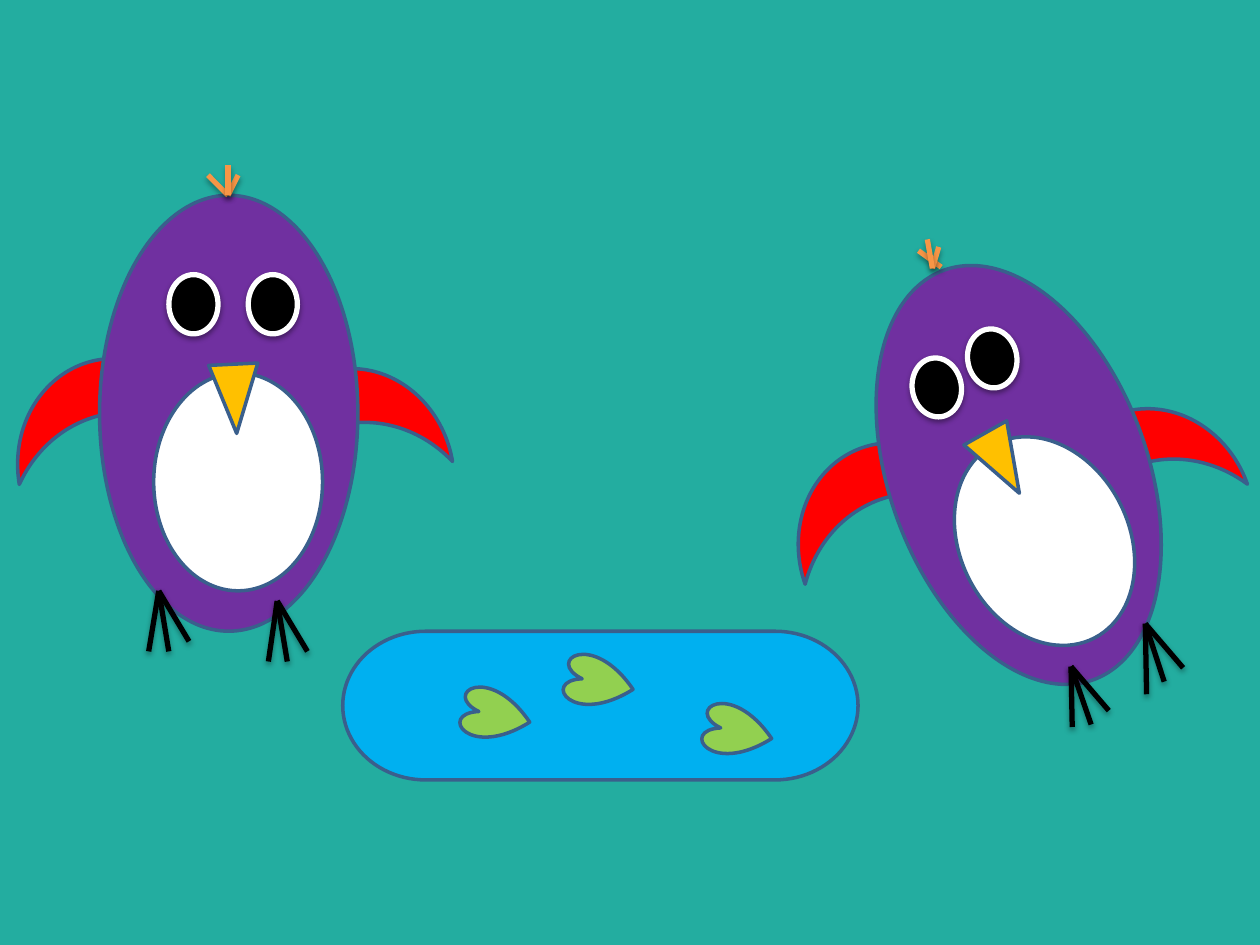
from dataclasses import dataclass

from lxml.etree import SubElement
from pptx import Presentation
from pptx.dml.color import RGBColor
from pptx.enum.shapes import MSO_CONNECTOR as Connector, MSO_SHAPE as Preset
from pptx.oxml.ns import qn
from pptx.shapes.group import GroupShape
from pptx.util import Inches, Pt

COLUMNS, ROWS = 100, 75
CELL = Inches(10) / COLUMNS
COLORS = {
    "meadow": "23ADA0", "outline": "3A5F8C", "wing": "FF0000", "body": "7030A0",
    "white": "FFFFFF", "black": "000000", "crest": "F79646", "beak": "FFC000",
    "water": "00B0F0", "leaf": "92D050",
}
Point = tuple[float, float]


@dataclass(frozen=True)
class Part:
    preset: Preset
    width: float
    height: float
    fill: str
    line: str = "outline"
    weight: float = 2
    shaded: bool = False


@dataclass(frozen=True)
class Place:
    column: float
    row: float
    turn: float = 0


@dataclass(frozen=True)
class Fan:
    root: Point
    tips: tuple[Point, ...]


@dataclass(frozen=True)
class Bird:
    wings: tuple[Place, ...]
    body: Place
    eyes: tuple[Place, ...]
    feet: tuple[Fan, ...]
    crest: tuple[Fan, ...]
    belly: Place
    beak: Place


WING = Part(Preset.MOON, 8.7, 15.7, "wing")
BODY = Part(Preset.FLOWCHART_CONNECTOR, 20.5, 34.6, "body")
EYE = Part(Preset.FLOWCHART_CONNECTOR, 3.9, 4.7, "black", "white", 3, True)
BELLY = Part(Preset.FLOWCHART_CONNECTOR, 13.4, 17.3, "white")
BEAK = Part(Preset.ISOSCELES_TRIANGLE, 3.9, 5.5, "beak")
POND = Part(Preset.FLOWCHART_TERMINATOR, 40.9, 11.8, "water")
LEAF = Part(Preset.HEART, 3.9, 5.5, "leaf")

LEANING_BIRD = Bird(
    wings=(Place(65.5, 31.8, 70.5), Place(85.8, 29.1, 70.5)),
    body=Place(70.6, 20.4, 339.9),
    eyes=(Place(72.4, 28.4, 350.2), Place(76.8, 26.1, 350.2)),
    feet=(
        Fan((85, 52.9), ((88, 56.4), (86.6, 57.5), (85.1, 57.7))),
        Fan((90.9, 49.5), ((91, 55.1), (93.9, 53), (92.4, 54.1))),
    ),
    crest=(
        Fan((74.7, 21.2), ((72.9, 19.9),)),
        Fan((74, 21.3), ((74.5, 19.6), (73.6, 19))),
    ),
    belly=Place(76.2, 34.3, 332.7),
    beak=Place(77.6, 34, 150.6),
)
UPRIGHT_BIRD = Bird(
    wings=(Place(4.2, 25, 80.4), Place(23.1, 25.8, 80.4)),
    body=Place(7.9, 15.5),
    eyes=(Place(13.4, 21.8), Place(19.7, 21.8)),
    feet=(
        Fan((12.6, 46.9), ((11.8, 51.7), (15, 50.9), (13.4, 51.7))),
        Fan((22, 47.7), ((21.3, 52.5), (24.4, 51.7), (22.8, 52.5))),
    ),
    crest=(Fan((18.1, 15.5), ((16.5, 13.9), (18.9, 13.9), (18.1, 13.1))),),
    belly=Place(12.2, 29.6),
    beak=Place(16.7, 28.9, 177.2),
)
POND_PLACE = Place(27.2, 50.1)
LEAF_PLACES = (
    Place(37.4, 54, 281.8), Place(45.6, 51.4, 281.8), Place(56.6, 55.3, 281.8),
)


def cells(count: float) -> int:
    return round(count * CELL)


def color(name: str) -> RGBColor:
    return RGBColor.from_string(COLORS[name])


def add_shadow(shape, distance: float, opacity: int) -> None:
    effects = SubElement(shape._element.spPr, qn("a:effectLst"))
    shadow = SubElement(
        effects, qn("a:outerShdw"), blurRad=str(Pt(3.1)), dist=str(Pt(distance)),
        dir="5400000", rotWithShape="0",
    )
    tint = SubElement(shadow, qn("a:srgbClr"), val=COLORS["black"])
    SubElement(tint, qn("a:alpha"), val=str(opacity * 1000))


def draw_part(group: GroupShape, part: Part, *places: Place) -> None:
    for place in places:
        shape = group.shapes.add_shape(
            part.preset, cells(place.column), cells(place.row),
            cells(part.width), cells(part.height),
        )
        shape.rotation = place.turn
        shape.fill.solid()
        shape.fill.fore_color.rgb = color(part.fill)
        shape.line.color.rgb = color(part.line)
        shape.line.width = Pt(part.weight)
        if part.shaded:
            add_shadow(shape, 1.6, 38)
        else:
            shape.shadow.inherit = False


def draw_fans(group: GroupShape, fans: tuple[Fan, ...], tint: str) -> None:
    for fan in fans:
        for tip in fan.tips:
            stroke = group.shapes.add_connector(
                Connector.STRAIGHT, *map(cells, fan.root), *map(cells, tip)
            )
            stroke.line.color.rgb = color(tint)
            stroke.line.width = Pt(3)
            add_shadow(stroke, 1.8, 35)


def draw_bird(page, bird: Bird) -> None:
    group = page.shapes.add_group_shape()
    draw_part(group, WING, *bird.wings)
    draw_part(group, BODY, bird.body)
    draw_part(group, EYE, *bird.eyes)
    draw_fans(group, bird.feet, "black")
    draw_fans(group, bird.crest, "crest")
    draw_part(group, BELLY, bird.belly)
    draw_part(group, BEAK, bird.beak)


def draw_pond(page) -> None:
    group = page.shapes.add_group_shape()
    draw_part(group, POND, POND_PLACE)
    draw_part(group, LEAF, *LEAF_PLACES)


def main() -> None:
    deck = Presentation()
    deck.slide_width, deck.slide_height = cells(COLUMNS), cells(ROWS)
    page = deck.slides.add_slide(deck.slide_layouts[6])
    page.background.fill.solid()
    page.background.fill.fore_color.rgb = color("meadow")
    draw_bird(page, LEANING_BIRD)
    draw_pond(page)
    draw_bird(page, UPRIGHT_BIRD)
    deck.save("out.pptx")


if __name__ == "__main__":
    main()
